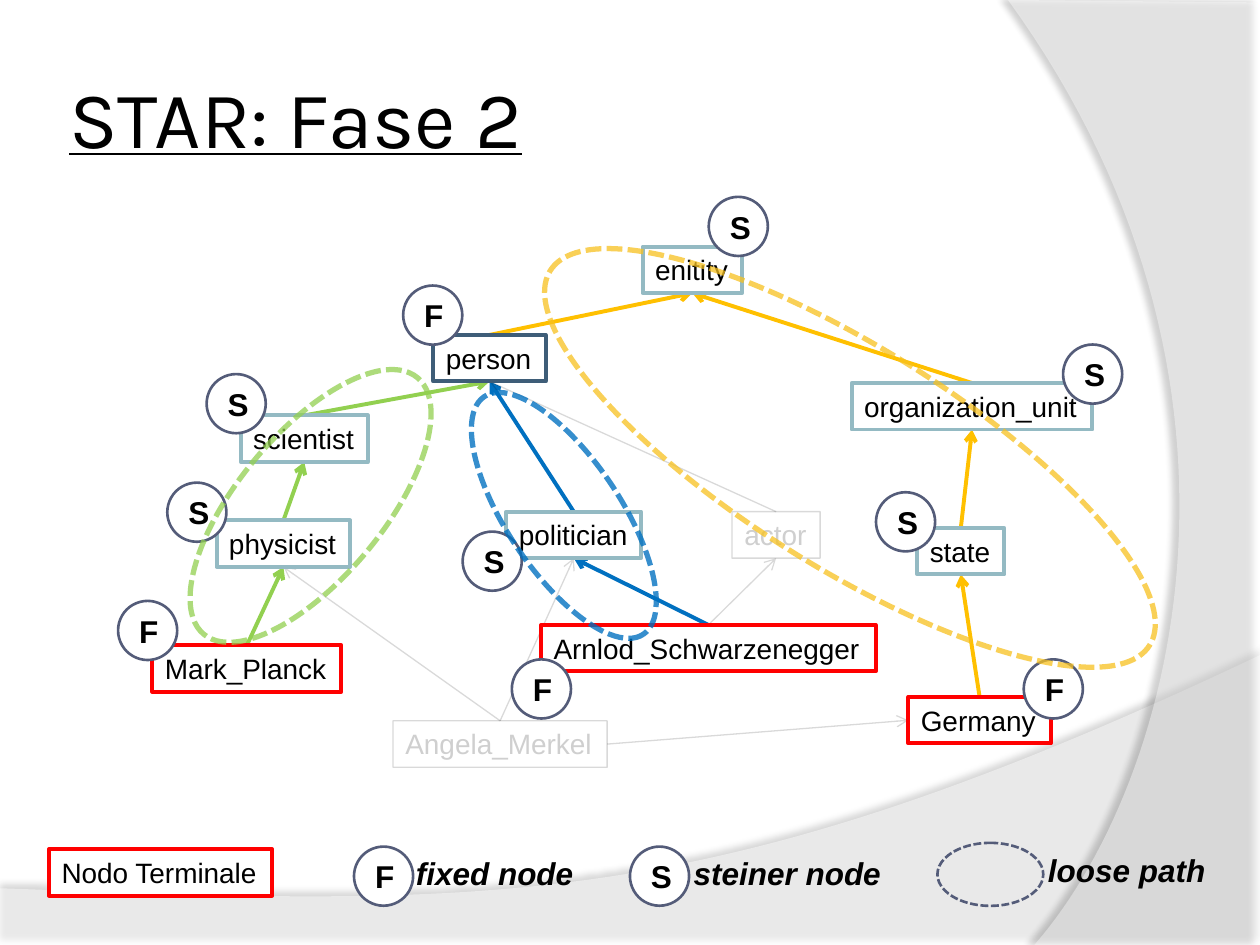
from typing import NamedTuple, Optional

from lxml.etree import SubElement
from pptx import Presentation
from pptx.dml.color import RGBColor
from pptx.enum.dml import MSO_LINE
from pptx.enum.shapes import MSO_CONNECTOR, MSO_SHAPE
from pptx.enum.text import MSO_ANCHOR, MSO_AUTO_SIZE, PP_ALIGN
from pptx.oxml.ns import qn
from pptx.util import Pt

COLORS = {
    "white": "FFFFFF", "black": "000000", "muted": "CFCFCF",
    "steiner": "94BAC3", "terminal": "FF0000", "fixed": "3E5D78", "badge": "545C79",
    "yellow": "FFC000", "green": "92D050", "blue": "0070C0", "gold": "F7C120",
}
NODE_HEIGHT = 26.6
BADGE_SIZE = 33.8
TOP, LEFT, BOTTOM, RIGHT = range(4)


class Node(NamedTuple):
    label: str
    left: float
    top: float
    width: float
    kind: str


class Edge(NamedTuple):
    source: str
    target: str
    color: str
    source_side: int = TOP
    target_side: int = BOTTOM


class Badge(NamedTuple):
    letter: str
    left: float
    top: float


class Loop(NamedTuple):
    left: float
    top: float
    width: float
    height: float
    rotation: float
    color: str
    weight: float = 3
    opacity: int = 75


class Caption(NamedTuple):
    text: str
    left: float
    top: float
    width: float


class Backdrop(NamedTuple):
    start: tuple
    corners: list
    curve: list
    opacity: int
    shadow_opacity: int
    distance: float
    direction: int


NODES = [
    Node("enitity", 367.2, 140.9, 56.9, "steiner"),
    Node("organization_unit", 486.7, 218.9, 137.5, "steiner"),
    Node("state", 524.2, 301.7, 49.7, "steiner"),
    Node("Germany", 519.1, 398.3, 81.4, "terminal"),
    Node("person", 247.7, 191.4, 64.1, "fixed"),
    Node("actor", 418.3, 292.4, 50.4, "muted"),
    Node("politician", 289.4, 292.4, 77, "steiner"),
    Node("scientist", 137.5, 237.4, 72.7, "steiner"),
    Node("physicist", 123.8, 297.4, 76.3, "steiner"),
    Node("Mark_Planck", 87.1, 368.7, 108, "terminal"),
    Node("Angela_Merkel", 224.6, 411.9, 122.4, "muted"),
    Node("Arnlod_Schwarzenegger", 309.2, 357.1, 191.2, "terminal"),
    Node("Nodo Terminale", 28.1, 485.3, 127.4, "terminal"),
]
EDGES = [
    Edge("organization_unit", "enitity", "yellow"),
    Edge("state", "organization_unit", "yellow"),
    Edge("Germany", "state", "yellow"),
    Edge("person", "enitity", "yellow"),
    Edge("scientist", "person", "green"),
    Edge("politician", "person", "blue"),
    Edge("physicist", "scientist", "green"),
    Edge("Arnlod_Schwarzenegger", "politician", "blue"),
    Edge("Mark_Planck", "physicist", "green"),
    Edge("actor", "person", "muted"),
    Edge("Arnlod_Schwarzenegger", "actor", "muted"),
    Edge("Angela_Merkel", "politician", "muted"),
    Edge("Angela_Merkel", "physicist", "muted"),
    Edge("Angela_Merkel", "Germany", "muted", RIGHT, LEFT),
]
BADGES = [
    Badge("F", 202.3, 483.8), Badge("S", 360, 483.8), Badge("F", 230.4, 163.2),
    Badge("F", 67.5, 343.4), Badge("F", 292.5, 376.8), Badge("F", 585, 376.8),
    Badge("S", 95.6, 275.8), Badge("S", 118.1, 213.8), Badge("S", 405, 112.5),
    Badge("S", 264.4, 303.8), Badge("S", 607.5, 196.9), Badge("S", 500.6, 281.3),
]
CAPTIONS = [
    Caption("fixed node", 230.6, 484.2, 110.2),
    Caption("steiner node", 389.3, 484.2, 122.4),
    Caption("loose path", 591.8, 483, 105.1),
]
LOOPS = [
    Loop(547.9, 469.4, 36, 60.5, 90, "badge", 1.5, 100),
    Loop(82.1, 247.7, 190.8, 82.8, 309.8, "green"),
    Loop(283.7, 198.7, 403.9, 126, 32, "gold"),
    Loop(240.5, 262.1, 163.4, 64.8, 236.2, "blue", 3, 79),
]
BACKDROPS = [
    Backdrop((0, 507.6), [(0, 540), (720, 540), (720, 374.4)],
             [(720, 374.4), (402.5, 524.9), (281.5, 517.7), (0, 507.6)], 45, 35, 3.5, 270),
    Backdrop((720, 1.4), [(720, 540), (591.1, 540)],
             [(591.1, 540), (673.2, 445.7), (733, 216), (576, 0)], 40, 45, 4, 180),
]


def rgb(name: str) -> RGBColor:
    """Look up a named colour."""
    return RGBColor.from_string(COLORS[name])


def fade(item, percent: int) -> None:
    """Make the fill and line colours of an item translucent."""
    for color in list(item.element.spPr.iter(qn("a:srgbClr"))):
        SubElement(color, qn("a:alpha"), val=str(percent * 1000))


def bezier(curve: list, steps: int = 60) -> list:
    """Sample a cubic curve into points."""
    points = []
    for step in range(1, steps + 1):
        t = step / steps
        weights = ((1 - t) ** 3, 3 * t * (1 - t) ** 2, 3 * t * t * (1 - t), t ** 3)
        points.append(tuple(Pt(sum(w * point[axis] for w, point in zip(weights, curve)))
                            for axis in (0, 1)))
    return points


def draw_backdrop(page, backdrop: Backdrop) -> None:
    """Draw a translucent curved panel with a soft outer shadow."""
    builder = page.shapes.build_freeform(*map(Pt, backdrop.start))
    corners = [(Pt(x), Pt(y)) for x, y in backdrop.corners]
    builder.add_line_segments(corners + bezier(backdrop.curve))
    panel = builder.convert_to_shape()
    panel.fill.solid()
    panel.fill.fore_color.rgb = rgb("white")
    panel.line.fill.background()
    fade(panel, backdrop.opacity)
    panel.shadow.inherit = False
    effects = panel.element.spPr.find(qn("a:effectLst"))
    shadow = SubElement(effects, qn("a:outerShdw"), blurRad=str(Pt(4)),
                        dist=str(Pt(backdrop.distance)),
                        dir=str(backdrop.direction * 60000), algn="ctr", rotWithShape="0")
    color = SubElement(shadow, qn("a:srgbClr"), val=COLORS["black"])
    SubElement(color, qn("a:alpha"), val=str(backdrop.shadow_opacity * 1000))


def write(box, text: str, size: float, color: str = "black", font: str = "Arial"):
    """Write one left-aligned paragraph and return it."""
    para = box.text_frame.paragraphs[0]
    para.text = text
    para.alignment = PP_ALIGN.LEFT
    para.font.size = Pt(size)
    para.font.name = font
    para.font.color.rgb = rgb(color)
    return para


def fit(box) -> None:
    """Let a box grow around a single unwrapped line."""
    box.text_frame.word_wrap = False
    box.text_frame.auto_size = MSO_AUTO_SIZE.SHAPE_TO_FIT_TEXT
    box.text_frame.vertical_anchor = MSO_ANCHOR.TOP


def draw_shape(page, preset, bounds: tuple, line: str, weight: float, fill: Optional[str]):
    """Draw an outlined preset shape with an optional fill."""
    shape = page.shapes.add_shape(preset, *map(Pt, bounds))
    shape.shadow.inherit = False
    if fill:
        shape.fill.solid()
        shape.fill.fore_color.rgb = rgb(fill)
    else:
        shape.fill.background()
    shape.line.color.rgb = rgb(line)
    shape.line.width = Pt(weight)
    return shape


def draw_node(page, node: Node):
    """Draw a labelled graph node."""
    muted = node.kind == "muted"
    box = draw_shape(page, MSO_SHAPE.RECTANGLE, (node.left, node.top, node.width, NODE_HEIGHT),
                     "black" if muted else node.kind, 0.75 if muted else 2.25,
                     None if muted else "white")
    if muted:
        fade(box, 15)
    fit(box)
    write(box, node.label, 16, "muted" if muted else "black")
    return box


def draw_edge(page, edge: Edge):
    """Draw an arrow that is still to be joined to its nodes."""
    muted = edge.color == "muted"
    arrow = page.shapes.add_connector(MSO_CONNECTOR.STRAIGHT, 0, 0, 0, 0)
    arrow.line.color.rgb = rgb("black" if muted else edge.color)
    arrow.line.width = Pt(0.75 if muted else 2.25)
    if muted:
        fade(arrow, 15)
    SubElement(arrow.element.spPr.find(qn("a:ln")), qn("a:tailEnd"), type="arrow")
    SubElement(arrow.element.spPr, qn("a:effectLst"))
    return arrow


def draw_badge(page, badge: Badge) -> None:
    """Draw a circled letter."""
    circle = draw_shape(page, MSO_SHAPE.OVAL, (badge.left, badge.top, BADGE_SIZE, BADGE_SIZE),
                        "badge", 1.5, "white")
    circle.text_frame.vertical_anchor = MSO_ANCHOR.MIDDLE
    para = write(circle, badge.letter, 18)
    para.alignment = PP_ALIGN.CENTER
    para.font.bold = True


def draw_caption(page, caption: Caption) -> None:
    """Draw a legend caption."""
    box = page.shapes.add_textbox(*map(Pt, (caption.left, caption.top, caption.width, 29.1)))
    fit(box)
    para = write(box, caption.text, 18)
    para.font.bold = para.font.italic = True


def draw_loop(page, loop: Loop) -> None:
    """Draw a dashed rotated ellipse."""
    ellipse = draw_shape(page, MSO_SHAPE.OVAL, loop[:4], loop.color, loop.weight, None)
    ellipse.line.dash_style = MSO_LINE.SQUARE_DOT
    ellipse.rotation = loop.rotation
    if loop.opacity < 100:
        fade(ellipse, loop.opacity)


def draw_title(page) -> None:
    """Draw the underlined slide title."""
    box = page.shapes.add_textbox(Pt(36), Pt(21.6), Pt(588.2), Pt(90))
    frame = box.text_frame
    frame.word_wrap = True
    frame.vertical_anchor = MSO_ANCHOR.MIDDLE
    frame.margin_left = frame.margin_right = Pt(3.6)
    write(box, "STAR: Fase 2", 46, font="Karla").font.underline = True


def main() -> None:
    """Build and save the deck."""
    deck = Presentation()
    deck.slide_width, deck.slide_height = Pt(720), Pt(540)
    page = deck.slides.add_slide(deck.slide_layouts[6])
    for backdrop in BACKDROPS:
        draw_backdrop(page, backdrop)
    arrows = [draw_edge(page, edge) for edge in EDGES]
    draw_title(page)
    boxes = {node.label: draw_node(page, node) for node in NODES}
    for arrow, edge in zip(arrows, EDGES):
        arrow.begin_connect(boxes[edge.source], edge.source_side)
        arrow.end_connect(boxes[edge.target], edge.target_side)
    for draw, items in ((draw_badge, BADGES), (draw_caption, CAPTIONS), (draw_loop, LOOPS)):
        for item in items:
            draw(page, item)
    deck.save("out.pptx")


if __name__ == "__main__":
    main()
